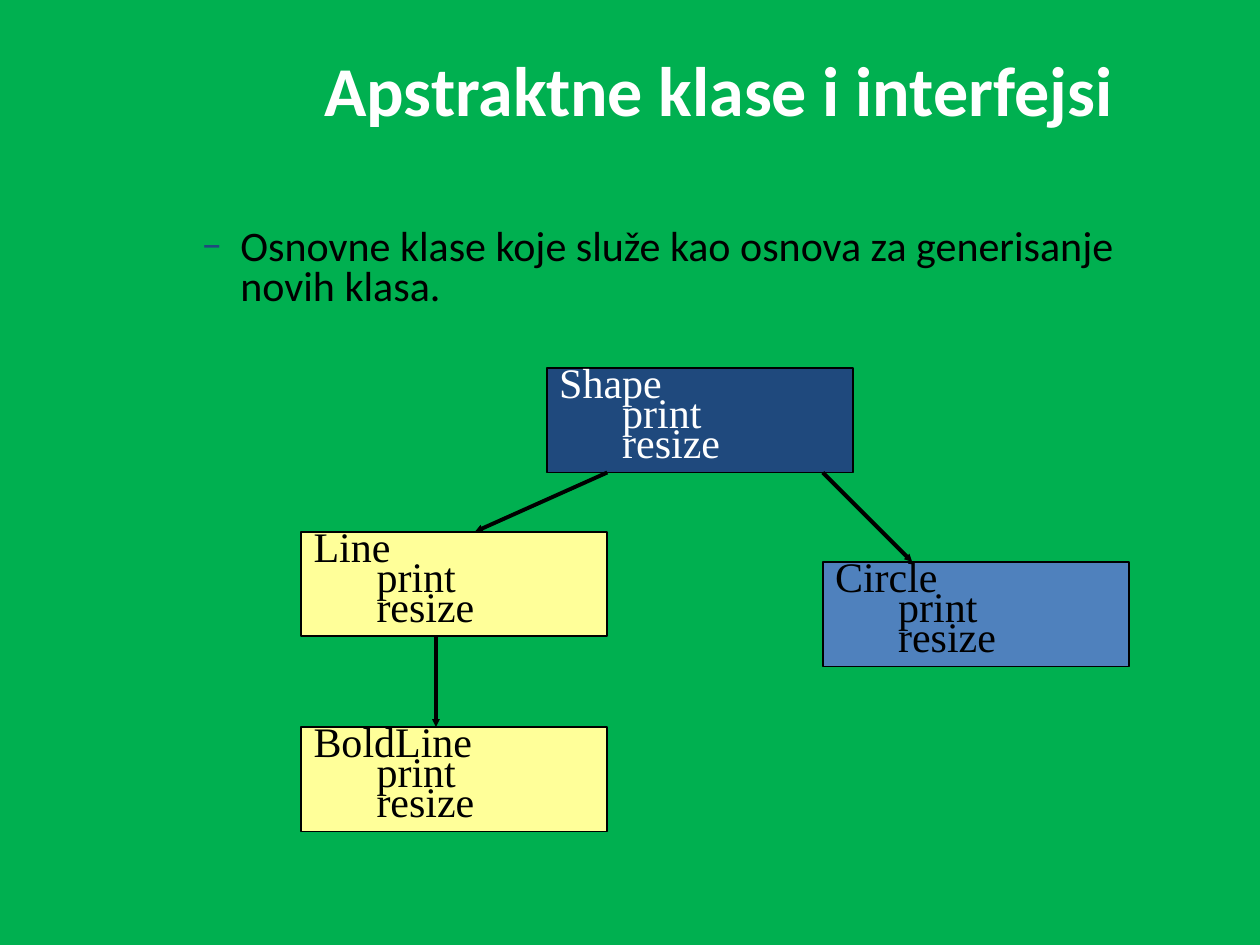
import pptx
import pptx.dml.color
import pptx.enum.shapes
import pptx.enum.text
import pptx.oxml.ns
import pptx.util
import lxml.etree

ALIGN = pptx.enum.text.PP_ALIGN
ANCHOR = pptx.enum.text.MSO_ANCHOR
AUTO_SIZE = pptx.enum.text.MSO_AUTO_SIZE
SHAPES = pptx.enum.shapes
GREEN, NAVY, BLUE, YELLOW = "00B050", "1F497D", "4F81BD", "FFFF99"
BLACK, WHITE = "000000", "FFFFFF"
BOX_W, BOX_H = 24.3, 8.3  # class box, in grid units


def color(value):
    return pptx.dml.color.RGBColor.from_string(value)


def add_xml(parent, tag, **attributes):
    return lxml.etree.SubElement(parent, pptx.oxml.ns.qn(tag), attributes)


def write(p, text, font="Calibri", size=24, fill=BLACK, bold=False,
          align=ALIGN.LEFT, spacing=1.0, before=0):
    p.alignment = align
    p.line_spacing = spacing
    p.space_before = pptx.util.Pt(before)
    r = p.add_run()
    r.text = text
    r.font.name = font
    r.font.size = pptx.util.Pt(size)
    r.font.bold = bold
    r.font.color.rgb = color(fill)


class Deck:
    """Slide on a grid of 100 columns by 75 rows."""

    def __init__(self, background):
        self.prs = pptx.Presentation()
        self.prs.slide_width = pptx.util.Inches(10)
        self.prs.slide_height = pptx.util.Inches(7.5)
        self.s = self.prs.slides.add_slide(self.prs.slide_layouts[6])
        fill = self.s.background.fill
        fill.solid()
        fill.fore_color.rgb = color(background)

    def grid(self, *units):
        return [round(u * self.prs.slide_width / 100) for u in units]

    def textbox(self, col, row, width, height, text, anchor=ANCHOR.TOP, **style):
        sp = self.s.shapes.add_textbox(*self.grid(col, row, width, height))
        tf = sp.text_frame
        tf.word_wrap = True
        tf.vertical_anchor = anchor
        write(tf.paragraphs[0], text, **style)
        return tf.paragraphs[0]

    def bullet(self, p, mark, fill, margin, indent):
        pPr = p._p.get_or_add_pPr()
        pPr.set("marL", str(pptx.util.Inches(margin)))
        pPr.set("indent", str(pptx.util.Inches(indent)))
        add_xml(add_xml(pPr, "a:buClr"), "a:srgbClr", val=fill)
        add_xml(pPr, "a:buFont", typeface="Calibri")
        add_xml(pPr, "a:buChar", char=mark)

    def class_box(self, col, row, name, fill, ink=BLACK):
        sp = self.s.shapes.add_shape(SHAPES.MSO_SHAPE.RECTANGLE,
                                     *self.grid(col, row, BOX_W, BOX_H))
        sp.shadow.inherit = False
        sp.fill.solid()
        sp.fill.fore_color.rgb = color(fill)
        sp.line.color.rgb = color(BLACK)
        sp.line.width = pptx.util.Pt(1)
        tf = sp.text_frame
        tf.word_wrap = True
        tf.auto_size = AUTO_SIZE.SHAPE_TO_FIT_TEXT
        tf.vertical_anchor = ANCHOR.TOP
        for i, text in enumerate((name, "\tprint", "\tresize")):
            p = tf.add_paragraph() if i else tf.paragraphs[0]
            write(p, text, font="Times New Roman", fill=ink, spacing=0.6)

    def arrow(self, *ends):
        line = self.s.shapes.add_connector(SHAPES.MSO_CONNECTOR.STRAIGHT,
                                           *self.grid(*ends))
        line.line.color.rgb = color(BLACK)
        line.line.width = pptx.util.Pt(2.25)
        add_xml(line.line._get_or_add_ln(), "a:tailEnd",
                type="triangle", w="sm", len="sm")
        add_xml(line._element.spPr, "a:effectLst")


def main():
    deck = Deck(GREEN)

    # Title and statement
    deck.textbox(11.8, 0, 77.5, 14, "Apstraktne klase i interfejsi",
                 anchor=ANCHOR.MIDDLE, size=40, fill=WHITE, bold=True,
                 align=ALIGN.RIGHT)
    p = deck.textbox(10, 17.7, 85, 8,
                     "Osnovne klase koje služe kao osnova za generisanje novih klasa.",
                     spacing=0.8, before=4.8)
    deck.bullet(p, "–", NAVY, margin=0.81, indent=-0.31)

    # Class hierarchy
    left, top, right = 23.9, 43.4, 65.3
    shape_row, line_row, circle_row, bold_row = 29.2, 42.2, 44.6, 57.7
    deck.class_box(top, shape_row, "Shape", NAVY, WHITE)
    deck.class_box(left, line_row, "Line", YELLOW)
    deck.class_box(right, circle_row, "Circle", BLUE)
    deck.class_box(left, bold_row, "BoldLine", YELLOW)

    # Inheritance arrows, from base class to derived class
    deck.arrow(34.6, line_row + BOX_H, 34.6, bold_row)
    deck.arrow(right, shape_row + BOX_H, 72.4, circle_row)
    deck.arrow(left + BOX_W, shape_row + BOX_H, 37.7, line_row)

    deck.prs.save("out.pptx")


if __name__ == "__main__":
    main()
